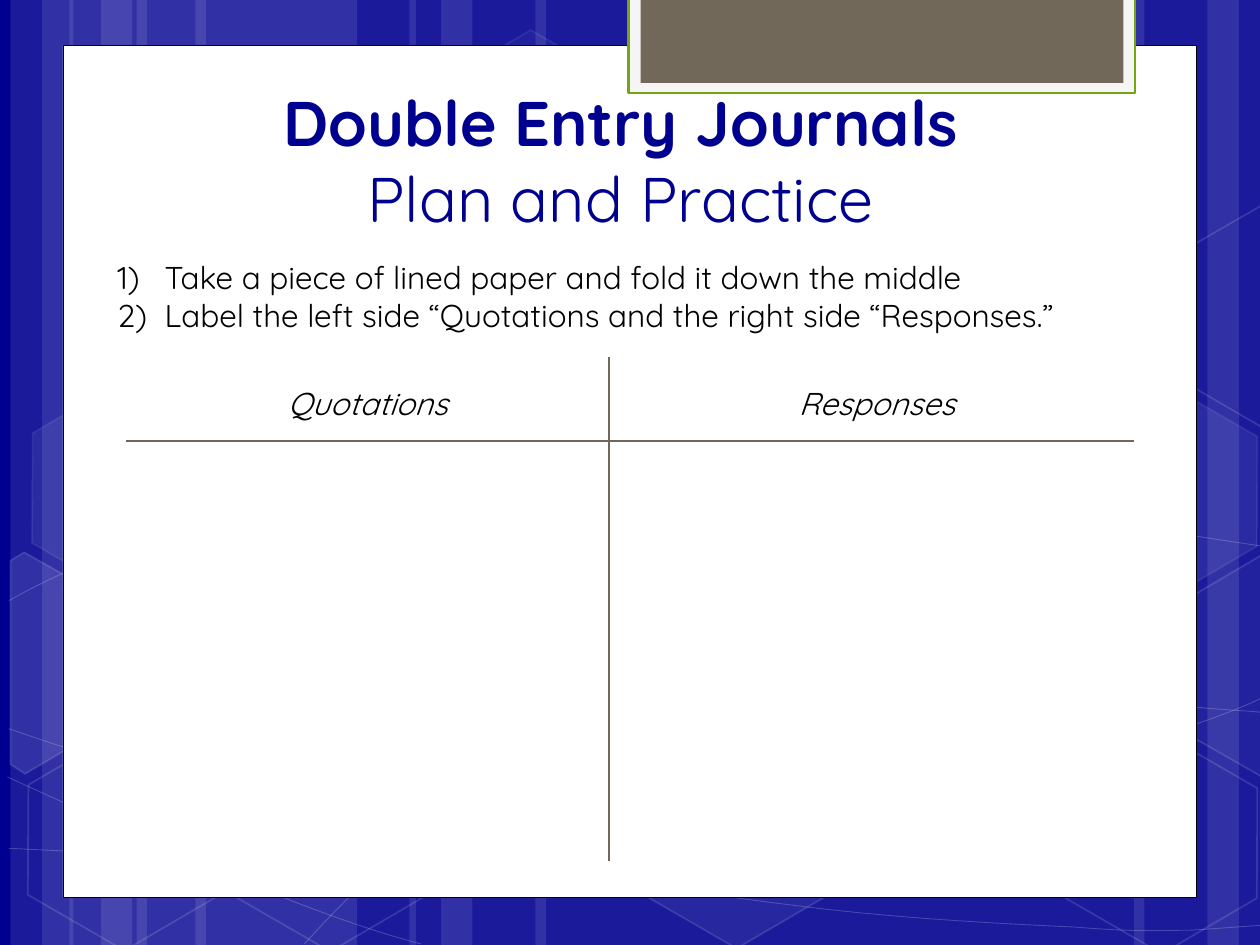
import lxml.etree
import pptx
import pptx.dml.color
import pptx.enum.shapes
import pptx.enum.text
import pptx.oxml.ns
import pptx.util

CELL = 1 / 12
COLUMNS, ROWS = 120, 90
FONT = "Quicksand"
COLORS = {"navy": "000090", "white": "FFFFFF", "black": "000000",
          "frame": "F5F5F5", "green": "74A510", "taupe": "71685A"}
ALIGN = pptx.enum.text.PP_ALIGN
ANCHOR = pptx.enum.text.MSO_ANCHOR
SHAPE = pptx.enum.shapes.MSO_SHAPE

STRIPES = [(13, 21), (1, 6), (4, 10), (18.6, 21), (6.6, 6), (9.6, 10),
           (88, 21), (115, 6), (108, 10), (51, 37), (39, 6), (42, 10)]

CURVES = [
    [(0.85, 80.8), (7.3, 81.1), (13.8, 81.5), (22.8, 81.4), (31.8, 81.2), (43, 81),
     (55, 79.8), (67, 78.6), (84, 76.3), (95, 74), (106, 71.8), (117.2, 68.2),
     (120.85, 66.1)],
    [(0.85, 57.2), (4.3, 55.3), (7.8, 53.5), (14.5, 51.7), (21.4, 49.9), (31.1, 47.3),
     (41.6, 46.4), (52.3, 45.6), (65.3, 45.5), (78.5, 46.4), (91.7, 47.4),
     (113.6, 51.1), (120.85, 52.1)],
    [(0.7, 74), (15.2, 80.6), (29.6, 87.2), (40.1, 89.9)],
    [(0.85, 69.4), (4.6, 70.7), (8.4, 72), (15.4, 73.9), (22.3, 75.7), (32.8, 78.7),
     (42.8, 80.8), (52.8, 82.8), (65.4, 85), (75.4, 86.2), (85.3, 87.5), (96, 88),
     (102.4, 88.3), (108.6, 88.8), (110.3, 88.6), (113.4, 88.6), (116.5, 88.4),
     (118.7, 88.2), (120.85, 88.1)],
    [(29, 89.9), (31.2, 87.5), (33.4, 85.1), (36.2, 82.9), (39.1, 80.8), (43.2, 78.4),
     (46.6, 76.7), (49.9, 75), (52, 74.3), (56.4, 73.1), (60.7, 71.9), (68.8, 70.2),
     (73, 69.4), (77.3, 68.5), (77.9, 68.5), (81.6, 68.3), (85.3, 67.9), (91.2, 67.6),
     (95.3, 67.4), (99.5, 67.3), (106.3, 67.4), (106.3, 67.4), (106.3, 67.4),
     (114.4, 67.4), (114.4, 67.4), (116.5, 67.6), (118.6, 67.7), (119.6, 67.8),
     (120.7, 67.9), (120.4, 67.8), (120.7, 67.9)],
]

HEXAGONS = [(40.1, 4.3, 4, 8), (59.6, 70.7, 6, 12), (1.3, 70.9, None, 12),
            (1.7, 37.4, 7, 8), (20.9, 71, None, 12), (90.4, 54.4, 10, 12),
            (100.1, 71.2, None, 12), (100.1, 37.7, 7, 8)]

CUT_HEXAGONS = [
    ([(1, 53.4), (2.3, 52.6), (11.5, 57.8), (11.4, 68.4), (2.4, 73.7), (1, 72.8)], 10),
    ([(111.1, 58.2), (120.1, 52.9), (121.1, 53.5), (121.1, 73.6), (120.2, 74),
      (111.1, 68.8)], 4),
    ([(111.1, 24.8), (120.1, 19.6), (121.2, 20.2), (121.1, 40.2), (120.2, 40.7),
      (111.1, 35.4)], None),
]


def cells(*counts):
    return [pptx.util.Inches(count * CELL) for count in counts]


def rgb(name):
    return pptx.dml.color.RGBColor.from_string(COLORS[name])


def paint(fill, name, opacity=100):
    fill.solid()
    fill.fore_color.rgb = rgb(name)
    if opacity < 100:
        color = fill._xPr.find(".//" + pptx.oxml.ns.qn("a:srgbClr"))
        alpha = lxml.etree.SubElement(color, pptx.oxml.ns.qn("a:alpha"))
        alpha.set("val", str(opacity * 1000))


def style(shape, fill=None, fill_opacity=100, line=None, width=1, line_opacity=100):
    shape.shadow.inherit = False
    if fill:
        paint(shape.fill, fill, fill_opacity)
    else:
        shape.fill.background()
    if line:
        paint(shape.line.fill, line, line_opacity)
        shape.line.width = pptx.util.Pt(width)
    else:
        shape.line.fill.background()


def add_rectangle(slide, box, **look):
    style(slide.shapes.add_shape(SHAPE.RECTANGLE, *cells(*box)), **look)


def add_hexagon(slide, left, top, fill_opacity, line_opacity):
    shape = slide.shapes.add_shape(SHAPE.HEXAGON, *cells(left, top, 21, 18.2))
    shape.adjustments[0] = 0.285
    shape.rotation = 30
    style(shape, fill="white" if fill_opacity else None, fill_opacity=fill_opacity,
          line="white", line_opacity=line_opacity)


def add_outline(slide, points, closed, **look):
    corners = [cells(*point) for point in points]
    builder = slide.shapes.build_freeform(*corners[0])
    builder.add_line_segments(corners[1:], close=closed)
    shape = builder.convert_to_shape()
    style(shape, **look)
    return shape


def add_curve(slide, controls):
    shape = add_outline(slide, controls, False, line="white", width=0.5, line_opacity=20)
    segments = list(shape._element.iter(pptx.oxml.ns.qn("a:lnTo")))
    outline = segments[0].getparent()
    for first in range(0, len(segments), 3):
        bend = lxml.etree.SubElement(outline, pptx.oxml.ns.qn("a:cubicBezTo"))
        for segment in segments[first:first + 3]:
            bend.append(segment[0])
            outline.remove(segment)


def add_line(slide, start, end):
    connector = slide.shapes.add_connector(
        pptx.enum.shapes.MSO_CONNECTOR.STRAIGHT, *cells(*start, *end))
    connector.line.color.rgb = rgb("taupe")
    connector.line.width = pptx.util.Pt(1.25)
    lxml.etree.SubElement(connector._element.spPr, pptx.oxml.ns.qn("a:effectLst"))


def number(paragraph):
    properties = paragraph._p.get_or_add_pPr()
    properties.set("marL", "342900")
    properties.set("indent", "-342900")
    bullet = lxml.etree.SubElement(properties, pptx.oxml.ns.qn("a:buAutoNum"))
    bullet.set("type", "arabicParenR")


def write(paragraph, text, size=18, color="black", bold=False, italic=False):
    run = paragraph.add_run()
    run.text = text
    font = run.font
    font.name, font.size = FONT, pptx.util.Pt(size)
    font.bold, font.italic = bold, italic
    font.color.rgb = rgb(color)


def add_text_frame(slide, box, anchor=ANCHOR.TOP):
    frame = slide.shapes.add_textbox(*cells(*box)).text_frame
    frame.word_wrap = True
    frame.vertical_anchor = anchor
    return frame


def add_backdrop(slide):
    paint(slide.background.fill, "navy")
    for left, width in STRIPES:
        add_rectangle(slide, (left, 0, width, ROWS), fill="white", fill_opacity=10)
    for controls in CURVES:
        add_curve(slide, controls)
    for hexagon in HEXAGONS:
        add_hexagon(slide, *hexagon)
    for points, opacity in CUT_HEXAGONS:
        add_outline(slide, points, True, fill="white" if opacity else None,
                    fill_opacity=opacity, line="white", line_opacity=12)
    add_rectangle(slide, (6, 4.3, 108, 81.2), fill="white", line="black", width=0.5)
    add_rectangle(slide, (59.85, -0.2, 48.25, 9.1), fill="frame", line="green", width=1.25)
    add_rectangle(slide, (61, -0.2, 46, 8.1), fill="taupe")


def add_title(slide):
    title = add_text_frame(slide, (13, 10.95, 92.2, 12), ANCHOR.BOTTOM).paragraphs[0]
    title.alignment = ALIGN.CENTER
    write(title, "Double Entry Journals", size=36, color="navy", bold=True)
    title.add_line_break()
    write(title, "Plan and Practice", size=36, color="navy")


def add_steps(slide):
    frame = add_text_frame(slide, (10, 24, 100, 8.5))
    steps = ["Take a piece of lined paper and fold it down the middle",
             "Label the left side “Quotations and the right side “Responses.”"]
    for index, step in enumerate(steps):
        paragraph = frame.add_paragraph() if index else frame.paragraphs[0]
        number(paragraph)
        write(paragraph, step)


def add_journal(slide):
    add_line(slide, (12, 42), (108, 42))
    add_line(slide, (58, 34), (58, 82))
    for heading, left, width in (("Quotations", 15, 40), ("Responses", 60, 47)):
        paragraph = add_text_frame(slide, (left, 36, width, 4.8)).paragraphs[0]
        paragraph.alignment = ALIGN.CENTER
        write(paragraph, heading, italic=True)


def main():
    presentation = pptx.Presentation()
    presentation.slide_width, presentation.slide_height = cells(COLUMNS, ROWS)
    slide = presentation.slides.add_slide(presentation.slide_layouts[6])
    add_backdrop(slide)
    add_title(slide)
    add_steps(slide)
    add_journal(slide)
    presentation.save("out.pptx")


if __name__ == "__main__":
    main()
